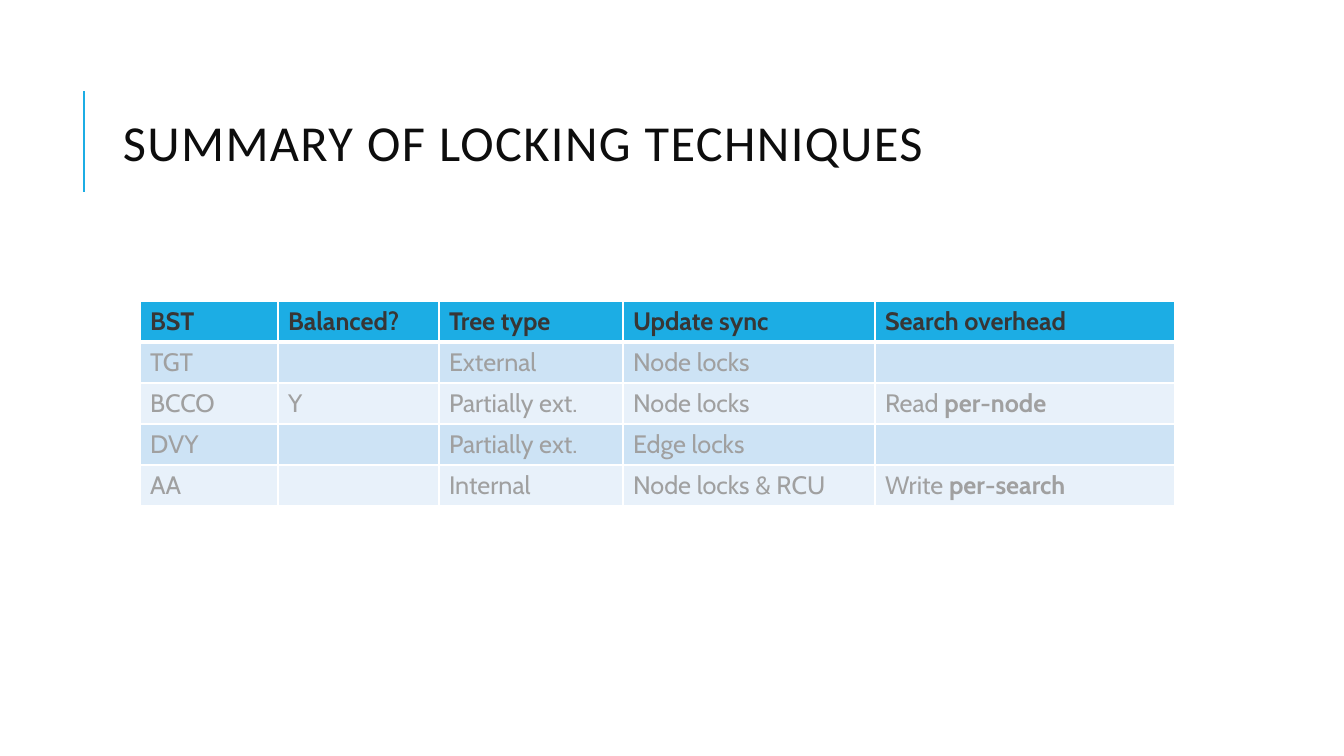
from lxml.etree import SubElement
from pptx import Presentation
from pptx.dml.color import RGBColor
from pptx.enum.shapes import MSO_CONNECTOR
from pptx.enum.text import MSO_ANCHOR
from pptx.oxml.ns import qn
from pptx.util import Pt

SCALE = 914400 / 100.8
COLORS = {
    "title": "0D0D0D",
    "accent": "1CADE4",
    "head": "383635",
    "body": "A0A0A0",
    "odd": "CDE3F5",
    "even": "E8F1FA",
    "rule": "FFFFFF",
}
TITLE = {"name": "Calibri", "size": Pt(36), "bold": False}
CELL = {"name": "Cabin", "size": Pt(18)}
WIDTHS = [138, 161, 184, 252, 300]
HEIGHT = 41
# Text after * is bold
ROWS = [
    ["BST", "Balanced?", "Tree type", "Update sync", "Search overhead"],
    ["TGT", "", "External", "Node locks", ""],
    ["BCCO", "Y", "Partially ext.", "Node locks", "Read *per-node"],
    ["DVY", "", "Partially ext.", "Edge locks", ""],
    ["AA", "", "Internal", "Node locks & RCU", "Write *per-search"],
]


def px(count):
    return round(count * SCALE)


def color(name):
    return RGBColor.from_string(COLORS[name])


def add_run(para, text, tint, style):
    run = para.add_run()
    run.text = text
    for key, value in style.items():
        setattr(run.font, key, value)
    run.font.color.rgb = color(tint)
    return run


def add_title(slide, text, *box):
    frame = slide.shapes.add_textbox(*map(px, box)).text_frame
    frame.word_wrap = True
    frame.vertical_anchor = MSO_ANCHOR.MIDDLE
    para = frame.paragraphs[0]
    para.line_spacing = 0.8
    run = add_run(para, text, "title", TITLE)
    run._r.get_or_add_rPr().set("spc", "100")


def add_line(slide, *ends):
    line = slide.shapes.add_connector(MSO_CONNECTOR.STRAIGHT, *map(px, ends))
    line.line.color.rgb = color("accent")
    line.line.width = Pt(1.5)
    SubElement(line._element.spPr, qn("a:effectLst"))


def add_edges(cell, row):
    """Draw the cell borders, with a thick rule between head and body."""
    thick = {0: "B", 1: "T"}.get(row)
    for side in "LRTB":
        width = Pt(3 if side == thick else 1)
        edge = SubElement(cell._tc.get_or_add_tcPr(), qn(f"a:ln{side}"), w=str(width))
        fill = SubElement(edge, qn("a:solidFill"))
        SubElement(fill, qn("a:srgbClr"), val=COLORS["rule"])


def fill_cell(cell, row, text):
    add_edges(cell, row)
    cell.fill.solid()
    shade = "accent" if row == 0 else "odd" if row % 2 else "even"
    cell.fill.fore_color.rgb = color(shade)
    plain, _, strong = text.partition("*")
    for part, bold in ((plain, row == 0), (strong, True)):
        if part:
            tint = "body" if row else "head"
            add_run(cell.text_frame.paragraphs[0], part, tint, {**CELL, "bold": bold})


def add_grid(slide, left, top):
    box = map(px, (left, top, sum(WIDTHS), HEIGHT * len(ROWS)))
    table = slide.shapes.add_table(len(ROWS), len(WIDTHS), *box).table
    for col, width in zip(table.columns, WIDTHS):
        col.width = px(width)
    for row, texts in enumerate(ROWS):
        table.rows[row].height = px(HEIGHT)
        for col, text in enumerate(texts):
            fill_cell(table.cell(row, col), row, text)


def main():
    deck = Presentation()
    deck.slide_width, deck.slide_height = px(1344), px(756)
    slide = deck.slides.add_slide(deck.slide_layouts[6])
    add_line(slide, 84, 192, 84, 91)
    add_title(slide, "SUMMARY OF LOCKING TECHNIQUES", 113, 65, 1072, 165)
    add_grid(slide, 140, 301)
    deck.save("out.pptx")


if __name__ == "__main__":
    main()
